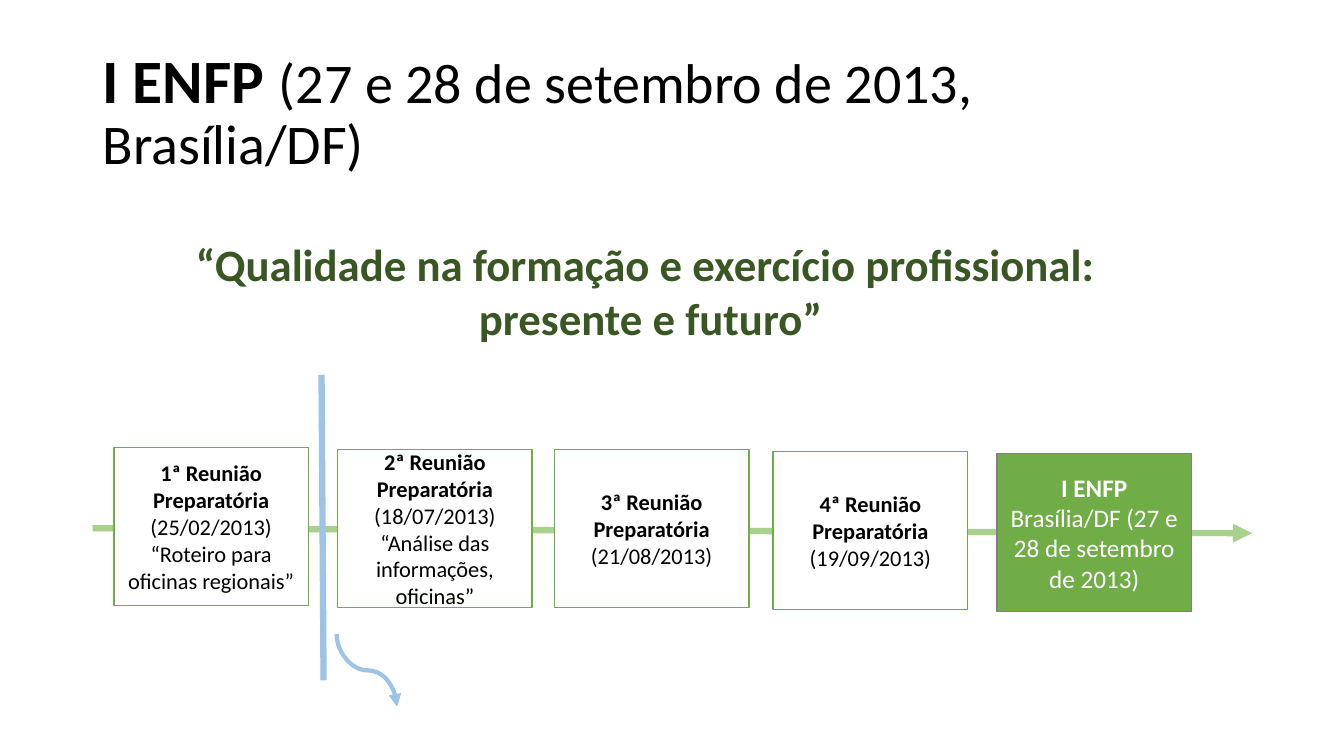
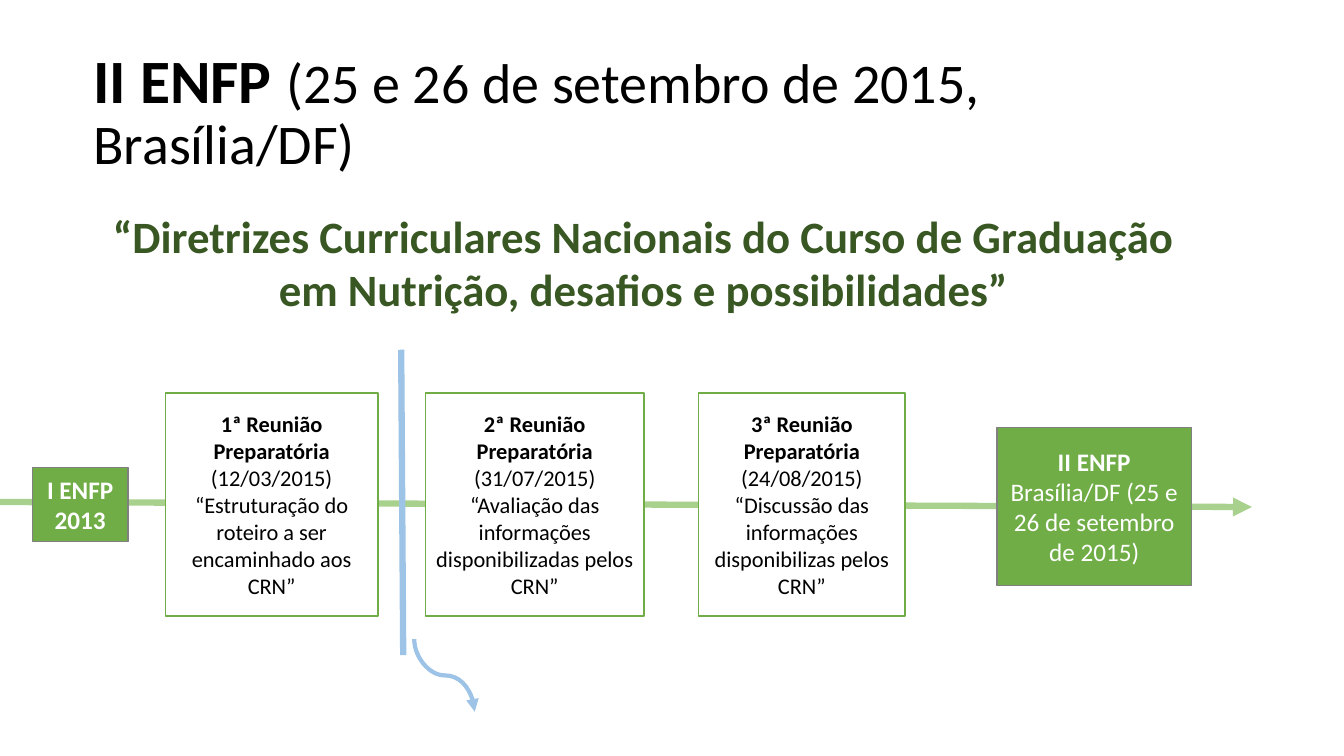
"""Build two timeline slides about the ENFP meetings and their preparatory steps."""
from dataclasses import dataclass
from typing import Any, NamedTuple

from lxml import etree
from pptx import Presentation, util as u
from pptx.dml.color import RGBColor
from pptx.enum import shapes, text
from pptx.oxml import ns

CELL = u.Inches(0.1)
COLUMNS, ROWS = 133.33, 75
GREEN, PALE_GREEN, DARK_GREEN = "70AD47", "A9D18E", "385723"
BLUE, GREY, BLACK, WHITE = "9DC3E6", "808080", "000000", "FFFFFF"
QUOTE_SIZE = (113.1, 14.2)
STEP_SIZE = (19.3, 15.7)
AXIS_END, AXIS_DROP = 124.2, 0.5
DIVIDER_SHIFT = (0.2, 30.3)
CURL_SHIFT = (6.0, 7.2)

Point = tuple[float, float]


class Area(NamedTuple):
    """A rectangle in grid cells."""
    left: float
    top: float
    width: float
    height: float


class Piece(NamedTuple):
    """A stretch of text with one weight and, if given, its own size."""
    words: str
    bold: bool = True
    size: int | None = None


Paragraphs = list[list[Piece]]


class Look(NamedTuple):
    """The fill, outline and lettering of a box."""
    fill: str | None
    outline: str | None
    ink: str
    size: int


STEP = Look(WHITE, GREEN, BLACK, 16)
EVENT = Look(GREEN, GREY, WHITE, 18)
QUOTE = Look(None, None, DARK_GREEN, 32)
TITLE = Look(None, None, BLACK, 40)


@dataclass
class Milestone:
    """One box on the timeline."""
    area: Area
    paragraphs: Paragraphs
    look: Look = STEP


@dataclass
class Meeting:
    """Everything one slide shows."""
    name: str
    occasion: str
    title_area: Area
    quote: list[str]
    quote_corner: Point
    axis_start: Point
    milestones: list[Milestone]
    divider_start: Point
    curl_start: Point


def colour(code: str) -> RGBColor:
    """Turn a hex string into a colour."""
    return RGBColor.from_string(code)


def cells(*counts: float) -> list[int]:
    """Turn grid cells into slide lengths."""
    return [u.Emu(round(count * CELL)) for count in counts]


def assign(target: Any, values: dict[str, Any]) -> None:
    """Set each named attribute of the target."""
    for name, value in values.items():
        setattr(target, name, value)


def write(frame: Any, paragraphs: Paragraphs, look: Look, layout: dict[str, Any]) -> None:
    """Fill a text frame with formatted paragraphs."""
    assign(frame, {"word_wrap": True, "vertical_anchor": text.MSO_ANCHOR.MIDDLE})
    for number, pieces in enumerate(paragraphs):
        paragraph = frame.add_paragraph() if number else frame.paragraphs[0]
        assign(paragraph, layout)
        for piece in pieces:
            run = paragraph.add_run()
            run.text = piece.words
            assign(run.font, {"name": "Calibri", "size": u.Pt(piece.size or look.size),
                              "bold": piece.bold})
            run.font.color.rgb = colour(look.ink)


def draw_box(slide: Any, area: Area, paragraphs: Paragraphs, look: Look) -> None:
    """Draw centred text, framed when the look has a fill."""
    if look.fill:
        box = slide.shapes.add_shape(shapes.MSO_SHAPE.RECTANGLE, *cells(*area))
        box.shadow.inherit = False
        box.fill.solid()
        box.fill.fore_color.rgb = colour(look.fill)
        box.line.color.rgb = colour(look.outline)
        box.line.width = u.Pt(1)
    else:
        box = slide.shapes.add_textbox(*cells(*area))
    write(box.text_frame, paragraphs, look, {"alignment": text.PP_ALIGN.CENTER})


def draw_title(slide: Any, meeting: Meeting) -> None:
    """Write the meeting's name, place and date at the top."""
    frame = slide.shapes.add_textbox(*cells(*meeting.title_area)).text_frame
    frame.margin_right = u.Inches(0.5)
    pieces = [Piece(f"{meeting.name} ", size=44), Piece(meeting.occasion, False)]
    write(frame, [pieces], TITLE, {"line_spacing": 0.9})


def draw_line(slide: Any, start: Point, end: Point, ink: str, weight: float = 4.5,
              arrow: bool = False, kind: Any = shapes.MSO_CONNECTOR.STRAIGHT) -> Any:
    """Draw a connector without shadow, with an arrowhead if wanted."""
    line = slide.shapes.add_connector(kind, *cells(*start, *end))
    line.line.color.rgb = colour(ink)
    line.line.width = u.Pt(weight)
    if arrow:
        etree.SubElement(line.line._get_or_add_ln(), ns.qn("a:tailEnd"), type="triangle")
    etree.SubElement(line._element.spPr, ns.qn("a:effectLst"))
    return line


def draw_curl(slide: Any, start: Point) -> None:
    """Draw a curved arrow that leaves downwards, as a turned and flipped connector."""
    width, height = CURL_SHIFT
    middle_x, middle_y = start[0] + width / 2, start[1] + height / 2
    curl = draw_line(slide, (middle_x + height / 2, middle_y - width / 2),
                     (middle_x - height / 2, middle_y + width / 2), BLUE, 3, True,
                     shapes.MSO_CONNECTOR.CURVE)
    curl._element.spPr.find(ns.qn("a:xfrm")).set("rot", str(270 * 60000))


def step(number: int, date: str, topic: str, area: Area) -> Milestone:
    """Describe a preparatory meeting."""
    paragraphs = [[Piece(f"{number}ª Reunião Preparatória "), Piece(f"({date})", False)]]
    if topic:
        paragraphs.append([Piece(f"“{topic}”", False)])
    return Milestone(area, paragraphs)


def event(name: str, detail: str, area: Area, bold: bool = False) -> Milestone:
    """Describe a national meeting."""
    return Milestone(area, [[Piece(name)], [Piece(detail, bold)]], EVENT)


def draw_meeting(slide: Any, meeting: Meeting) -> None:
    """Draw one meeting's title, quote and timeline."""
    draw_title(slide, meeting)
    start_x, start_y = meeting.axis_start
    draw_line(slide, (start_x, start_y), (AXIS_END, start_y + AXIS_DROP), PALE_GREEN,
              arrow=True)
    for milestone in meeting.milestones:
        draw_box(slide, milestone.area, milestone.paragraphs, milestone.look)
    draw_box(slide, Area(*meeting.quote_corner, *QUOTE_SIZE),
             [[Piece(words)] for words in meeting.quote], QUOTE)
    divider_x, divider_y = meeting.divider_start
    draw_line(slide, (divider_x, divider_y),
              (divider_x + DIVIDER_SHIFT[0], divider_y + DIVIDER_SHIFT[1]), BLUE)
    draw_curl(slide, meeting.curl_start)


MEETINGS = [
    Meeting(
        "I ENFP", "(27 e 28 de setembro de 2013, Brasília/DF)", Area(9.2, 4, 115, 14.5),
        ["“Qualidade na formação e exercício profissional: ", "presente e futuro”"],
        (8, 21.7), (9.2, 52.4),
        [
            event("I ENFP", "Brasília/DF (27 e 28 de setembro de 2013)",
                  Area(98.9, 45, *STEP_SIZE)),
            step(1, "25/02/2013", "Roteiro para oficinas regionais",
                 Area(11.3, 44.4, *STEP_SIZE)),
            step(2, "18/07/2013", "Análise das informações, oficinas",
                 Area(33.5, 44.6, *STEP_SIZE)),
            step(3, "21/08/2013", "", Area(55, 44.6, *STEP_SIZE)),
            step(4, "19/09/2013", "", Area(76.7, 44.8, *STEP_SIZE)),
        ],
        (31.9, 37.2), (33.4, 62.9)),
    Meeting(
        "II ENFP", "(25 e 26 de setembro de 2015, Brasília/DF)", Area(8.3, 4, 116.8, 14.5),
        ["“Diretrizes Curriculares Nacionais do Curso de Graduação em Nutrição, "
         "desafios e possibilidades”"],
        (7.3, 18.9), (0, 49.8),
        [
            event("I ENFP", "2013", Area(3.2, 46.4, 9.5, 7.3), bold=True),
            event("II ENFP", "Brasília/DF (25 e 26 de setembro de 2015)",
                  Area(98.9, 42.4, *STEP_SIZE)),
            step(1, "12/03/2015", "Estruturação do roteiro a ser encaminhado aos CRN",
                 Area(16.4, 39, 21.1, 22.1)),
            step(2, "31/07/2015", "Avaliação das informações disponibilizadas pelos CRN",
                 Area(42.2, 39, 21.7, 22.1)),
            step(3, "24/08/2015", "Discussão das informações disponibilizas pelos CRN",
                 Area(69.3, 39, 20.5, 22.1)),
        ],
        (39.8, 34.7), (41.1, 63.4)),
]


def main() -> None:
    """Build and save the presentation."""
    deck = Presentation()
    deck.slide_width, deck.slide_height = cells(COLUMNS, ROWS)
    for meeting in MEETINGS:
        draw_meeting(deck.slides.add_slide(deck.slide_layouts[6]), meeting)
    deck.save("out.pptx")


if __name__ == "__main__":
    main()
